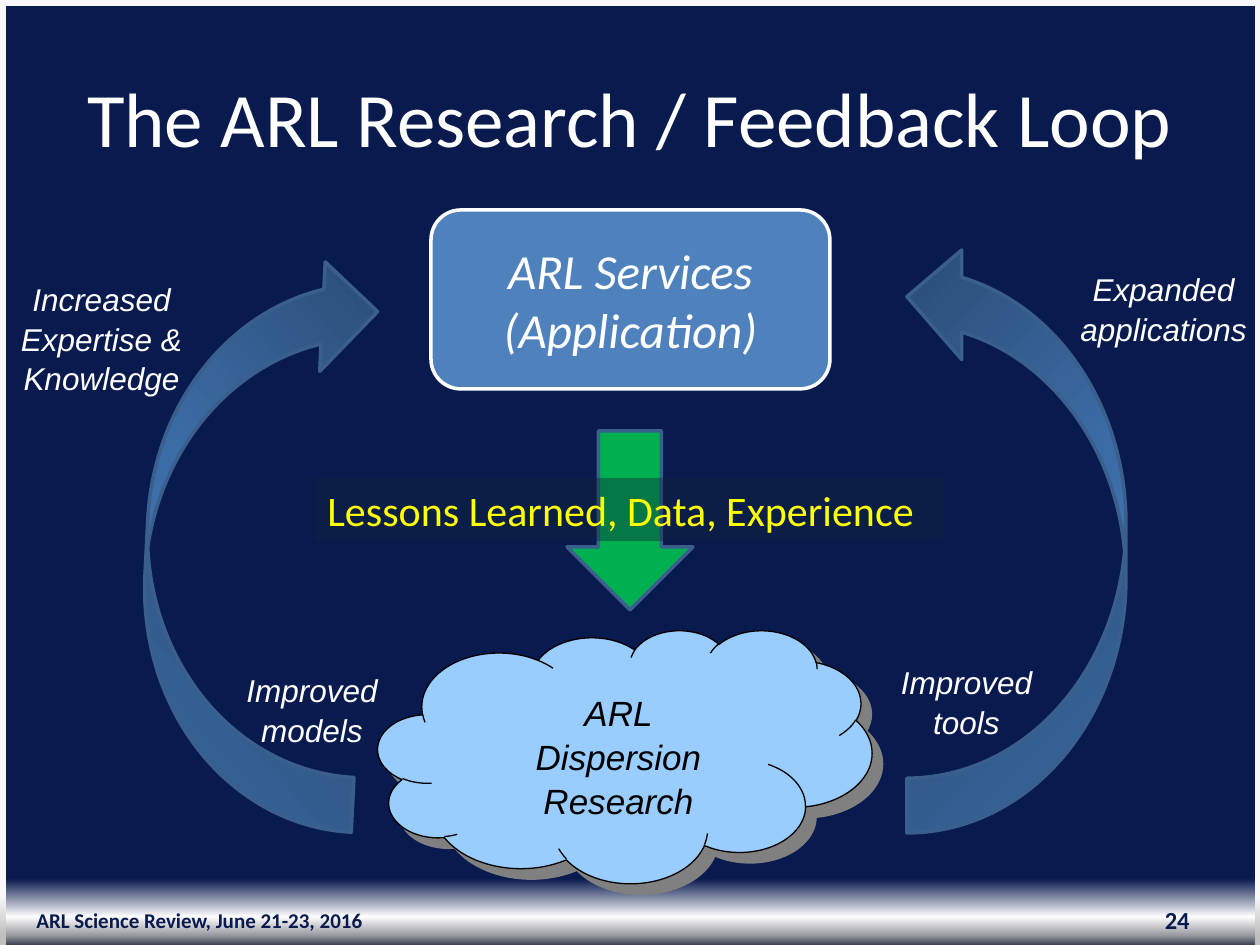
from lxml import etree
from pptx import Presentation
from pptx.dml.color import RGBColor
from pptx.enum import shapes, text
from pptx.oxml import ns
from pptx.util import Pt

EMU_PER_PX = 914400 / 126
WIDTH, HEIGHT = 1260, 945

NAVY = RGBColor(0x09, 0x1A, 0x4F)
WHITE = RGBColor(0xFF, 0xFF, 0xFF)
BLACK = RGBColor(0, 0, 0)
YELLOW = RGBColor(0xFF, 0xFF, 0)
FRAME = RGBColor(0xF8, 0xF8, 0xF8)
GREEN = RGBColor(0, 0xB0, 0x50)
BLUE = RGBColor(0x4F, 0x81, 0xBD)
OUTLINE = RGBColor(0x3A, 0x5F, 0x8C)
SKY = RGBColor(0x99, 0xCC, 0xFF)
SHADOW = RGBColor(0x80, 0x80, 0x80)
BANNER = RGBColor(0x0F, 0x24, 0x3E)

HORIZON = [(0, NAVY), (93, NAVY), (97, RGBColor(0xFE, 0xFE, 0xFE)),
           (99, RGBColor(0x97, 0x99, 0xA0)), (100, RGBColor(0x3C, 0x41, 0x4E))]
EDGE = [(0, FRAME), (95, RGBColor(0xF5, 0xF5, 0xF5)), (99, RGBColor(0xBF, 0xBF, 0xBF))]
LOOP = [(0, RGBColor(0x2A, 0x4C, 0x75)), (50, RGBColor(0x3C, 0x6C, 0xA6)),
        (100, RGBColor(0x47, 0x80, 0xC5))]


def px(length):
    return round(length * EMU_PER_PX)


def add_node(parent, tag, **attributes):
    return etree.SubElement(parent, ns.qn(tag), attributes)


class LoopSlide:
    heading_font = "Calibri"
    label_font = "Arial"

    def __init__(self, deck):
        self.slide = deck.slides.add_slide(deck.slide_layouts[5])

    def gradient(self, fill, stops, angle):
        fill.gradient()
        fill.gradient_angle = 360 - angle
        stop_list = fill.gradient_stops[0]._gs.getparent()
        for stop in list(stop_list):
            stop_list.remove(stop)
        for position, color in stops:
            stop = add_node(stop_list, "a:gs", pos=str(position * 1000))
            add_node(stop, "a:srgbClr", val=str(color))

    def background(self, stops, angle):
        self.gradient(self.slide.background.fill, stops, angle)

    def set_text(self, frame, lines, size, color, font, align=text.PP_ALIGN.CENTER,
                 bold=False, italic=False, spacing=None):
        frame.text = "\n".join(lines)
        for paragraph in frame.paragraphs:
            paragraph.alignment = align
            paragraph.line_spacing = spacing
            paragraph.font.name = font
            paragraph.font.size = Pt(size)
            paragraph.font.bold = bold
            paragraph.font.italic = italic
            paragraph.font.color.rgb = color

    def title(self, box, words):
        heading = self.slide.shapes.title
        heading.left, heading.top, heading.width, heading.height = map(px, box)
        heading.text_frame.vertical_anchor = text.MSO_ANCHOR.MIDDLE
        self.set_text(heading.text_frame, [words], 44, WHITE, self.heading_font)

    def shape(self, kind, box, fill=None, line=None, weight=2):
        drawn = self.slide.shapes.add_shape(kind, *map(px, box))
        drawn.shadow.inherit = False
        if fill is not None:
            drawn.fill.solid()
            drawn.fill.fore_color.rgb = fill
        if line is None:
            drawn.line.fill.background()
        else:
            drawn.line.color.rgb = line
            drawn.line.width = Pt(weight)
        return drawn

    def edge(self, left):
        strip = self.shape(shapes.MSO_SHAPE.RECTANGLE, (left, 0, 6, HEIGHT))
        self.gradient(strip.fill, EDGE, 90)

    def loop_arrow(self, box, flips, rotation=0):
        arrow = self.shape(shapes.MSO_SHAPE.CURVED_RIGHT_ARROW, box, line=OUTLINE)
        self.gradient(arrow.fill, LOOP, 225)
        arrow.rotation = rotation
        for flip in flips:
            arrow._element.spPr.xfrm.set(flip, "1")

    def cloud(self, box):
        drawn = self.shape(shapes.MSO_SHAPE.CLOUD, box, SKY, BLACK, 0.75)
        effects = drawn._element.spPr.find(ns.qn("a:effectLst"))
        shadow = add_node(effects, "a:outerShdw", dist=str(Pt(8.5)), dir="2700000",
                          algn="ctr", rotWithShape="0")
        add_node(shadow, "a:srgbClr", val=str(SHADOW))

    def label(self, box, lines, size=18, color=WHITE):
        frame = self.slide.shapes.add_textbox(*map(px, box)).text_frame
        frame.word_wrap = False
        self.set_text(frame, lines, size, color, self.label_font, italic=True, spacing=1.05)

    def footer(self, box, words, size, align):
        frame = self.slide.shapes.add_textbox(*map(px, box)).text_frame
        frame.word_wrap = True
        frame.vertical_anchor = text.MSO_ANCHOR.MIDDLE
        self.set_text(frame, [words], size, NAVY, self.heading_font, align, bold=True)

    def services(self, box, lines):
        card = self.shape(shapes.MSO_SHAPE.ROUNDED_RECTANGLE, box, BLUE, WHITE)
        card.text_frame.vertical_anchor = text.MSO_ANCHOR.MIDDLE
        self.set_text(card.text_frame, lines, 28, WHITE, self.heading_font, italic=True)

    def banner(self, box, words):
        band = self.shape(shapes.MSO_SHAPE.RECTANGLE, box, BANNER)
        tint = band._element.spPr.find(ns.qn("a:solidFill"))[0]
        add_node(tint, "a:alpha", val="40000")
        band.text_frame.vertical_anchor = text.MSO_ANCHOR.TOP
        self.set_text(band.text_frame, [words], 24, YELLOW, self.heading_font,
                      text.PP_ALIGN.LEFT)


def main():
    deck = Presentation()
    deck.slide_width, deck.slide_height = px(WIDTH), px(HEIGHT)
    loop = LoopSlide(deck)
    loop.background(HORIZON, 90)
    loop.edge(0)
    loop.shape(shapes.MSO_SHAPE.RECTANGLE, (2, 0, WIDTH - 2, 6), FRAME)
    loop.edge(WIDTH - 5)
    loop.title((63, 38, 1134, 158), "The ARL Research / Feedback Loop")
    loop.footer((0, 895, 399, 50), "ARL Science Review, June 21-23, 2016", 12,
                text.PP_ALIGN.CENTER)
    loop.footer((908, 895, 294, 50), "24", 14, text.PP_ALIGN.RIGHT)

    loop.shape(shapes.MSO_SHAPE.DOWN_ARROW, (567, 431, 126, 179), GREEN, OUTLINE)
    loop.cloud((378, 630, 494, 253))
    loop.label((522, 683, 193, 140), ["ARL", "Dispersion", "Research"], 20, BLACK)
    loop.loop_arrow((147, 251, 219, 576), ["flipV"], 2.9)
    loop.loop_arrow((907, 242, 219, 591), ["flipH", "flipV"])
    loop.label((887, 655, 159, 89), ["Improved", "tools"])
    loop.label((233, 663, 158, 89), ["Improved", "models"])
    loop.label((0, 272, 203, 127), ["Increased", "Expertise &", "Knowledge"])
    loop.label((1067, 262, 193, 89), ["Expanded", "applications"])
    loop.services((431, 210, 399, 179), ["ARL Services", "(Application)"])
    loop.banner((315, 478, 630, 63), "Lessons Learned, Data, Experience")
    deck.save("out.pptx")


if __name__ == "__main__":
    main()
